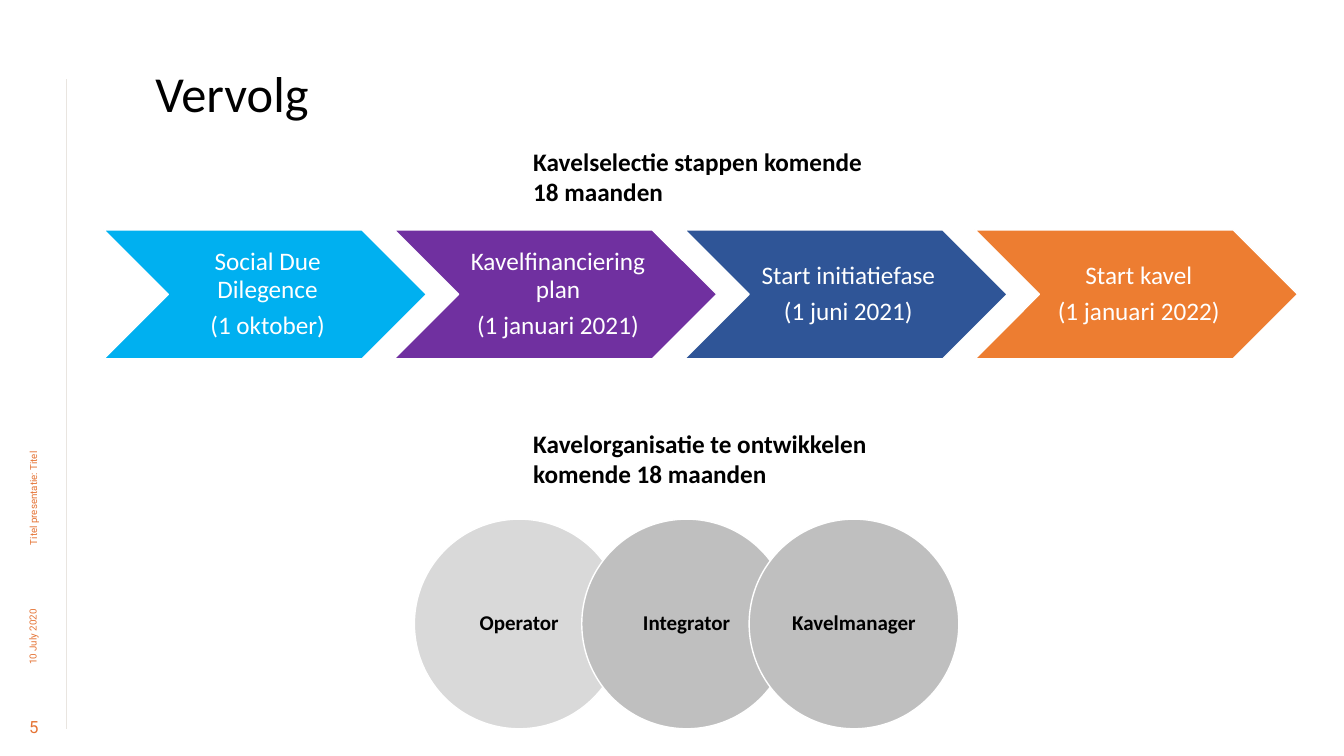
import pptx
import pptx.util
import pptx.dml.color
import pptx.enum.shapes
import pptx.enum.text
from lxml import etree

Inches, Pt = pptx.util.Inches, pptx.util.Pt
RGBColor = pptx.dml.color.RGBColor
SHAPES = pptx.enum.shapes.MSO_SHAPE
ALIGN = pptx.enum.text.PP_ALIGN
ANCHOR = pptx.enum.text.MSO_ANCHOR

BLACK = RGBColor(0x00, 0x00, 0x00)
WHITE = RGBColor(0xFF, 0xFF, 0xFF)
ORANGE = RGBColor(0xE5, 0x73, 0x34)
RULE_GREY = RGBColor(0xE9, 0xE5, 0xE0)
LIGHT_GREY = RGBColor(0xD9, 0xD9, 0xD9)
MID_GREY = RGBColor(0xBF, 0xBF, 0xBF)

STEPS = [
    (("Social Due Dilegence", "(1 oktober)"), RGBColor(0x00, 0xB0, 0xF0)),
    (("Kavelfinanciering plan", "(1 januari 2021)"), RGBColor(0x70, 0x30, 0xA0)),
    (("Start initiatiefase", "(1 juni 2021)"), RGBColor(0x2F, 0x55, 0x97)),
    (("Start kavel", "(1 januari 2022)"), RGBColor(0xED, 0x7D, 0x31)),
]
ROLES = [("Operator", LIGHT_GREY), ("Integrator", MID_GREY), ("Kavelmanager", MID_GREY)]

STEP_LEFT, STEP_TOP, STEP_PITCH = 1.03, 2.28, 2.88
STEP_SIZE = (3.2, 1.28)
ROLE_LEFT, ROLE_TOP, ROLE_PITCH = 4.11, 5.15, 1.66
ROLE_SIZE = (2.08, 2.08)
HEADING_LEFT = 5.19


def add_run(paragraph, text, size, color, bold=False, font="Calibri"):
    run = paragraph.add_run()
    run.text = text
    run.font.name = font
    run.font.size = Pt(size)
    run.font.bold = bold
    run.font.color.rgb = color


def add_label(slide, box, text, size, color, bold=False, font="Calibri",
              anchor=ANCHOR.TOP, align=ALIGN.LEFT, rotation=0):
    label = slide.shapes.add_textbox(*map(Inches, box))
    label.rotation = rotation
    frame = label.text_frame
    frame.word_wrap = True
    frame.vertical_anchor = anchor
    frame.paragraphs[0].alignment = align
    add_run(frame.paragraphs[0], text, size, color, bold, font)


def add_margin_label(slide, box, text, size, align=ALIGN.LEFT, rotation=270):
    """Orange text in the left margin of the slide."""
    add_label(slide, box, text, size, ORANGE, font="Roboto",
              anchor=ANCHOR.MIDDLE, align=align, rotation=rotation)


def add_node(slide, kind, box, fill, lines, size, color, insets, bold=False):
    """Filled shape with a white outline and centred lines of text."""
    node = slide.shapes.add_shape(kind, *map(Inches, box))
    node.shadow.inherit = False
    node.fill.solid()
    node.fill.fore_color.rgb = fill
    node.line.color.rgb = WHITE
    node.line.width = Pt(1)
    frame = node.text_frame
    frame.word_wrap = True
    frame.vertical_anchor = ANCHOR.MIDDLE
    (frame.margin_left, frame.margin_top,
     frame.margin_right, frame.margin_bottom) = map(Inches, insets)
    for index, line in enumerate(lines):
        paragraph = frame.add_paragraph() if index else frame.paragraphs[0]
        paragraph.alignment = ALIGN.CENTER
        paragraph.line_spacing = 0.9
        paragraph.space_after = Pt(0.35 * size)
        add_run(paragraph, line, size, color, bold)


def add_margin(slide):
    rule = slide.shapes.add_connector(
        pptx.enum.shapes.MSO_CONNECTOR.STRAIGHT,
        *map(Inches, (0.66, 7.23, 0.66, 0.78)))
    rule.line.color.rgb = RULE_GREY
    rule.line.width = Pt(0.5)
    etree.SubElement(rule.element.spPr, pptx.oxml.ns.qn("a:effectLst"))
    add_margin_label(slide, (-0.27, 5.94, 1.19, 0.32), "10 July 2020", 7)
    add_margin_label(slide, (0.01, 6.92, 0.65, 0.58), "5", 12, ALIGN.CENTER, 0)
    add_margin_label(slide, (-1.92, 3.09, 4.5, 0.33), "Titel presentatie: Titel", 7)


def add_title(slide, text):
    title = slide.shapes.title
    title.left, title.top, title.width, title.height = map(
        Inches, (1.44, 0.57, 8.12, 0.71))
    title.text_frame.vertical_anchor = ANCHOR.TOP
    paragraph = title.text_frame.paragraphs[0]
    paragraph.alignment = ALIGN.LEFT
    add_run(paragraph, text, 36, BLACK)


def main():
    deck = pptx.Presentation()
    deck.slide_width, deck.slide_height = Inches(13.33), Inches(7.5)
    slide = deck.slides.add_slide(deck.slide_layouts[5])
    add_margin(slide)
    add_title(slide, "Vervolg")

    add_label(slide, (HEADING_LEFT, 1.4, 3.6, 0.71),
              "Kavelselectie stappen komende 18 maanden", 18, BLACK, bold=True)
    for column, (lines, fill) in enumerate(STEPS):
        box = (STEP_LEFT + column * STEP_PITCH, STEP_TOP, *STEP_SIZE)
        add_node(slide, SHAPES.CHEVRON, box, fill, lines, 18, WHITE,
                 (0.08, 0.03, 0.03, 0.03))

    add_label(slide, (HEADING_LEFT, 4.2, 3.52, 0.71),
              "Kavelorganisatie te ontwikkelen komende 18 maanden", 18, BLACK, bold=True)
    for column, (role, fill) in enumerate(ROLES):
        box = (ROLE_LEFT + column * ROLE_PITCH, ROLE_TOP, *ROLE_SIZE)
        add_node(slide, SHAPES.OVAL, box, fill, [role], 15, BLACK,
                 (0.11, 0.02, 0.11, 0.02), bold=True)

    deck.save("out.pptx")


if __name__ == "__main__":
    main()
